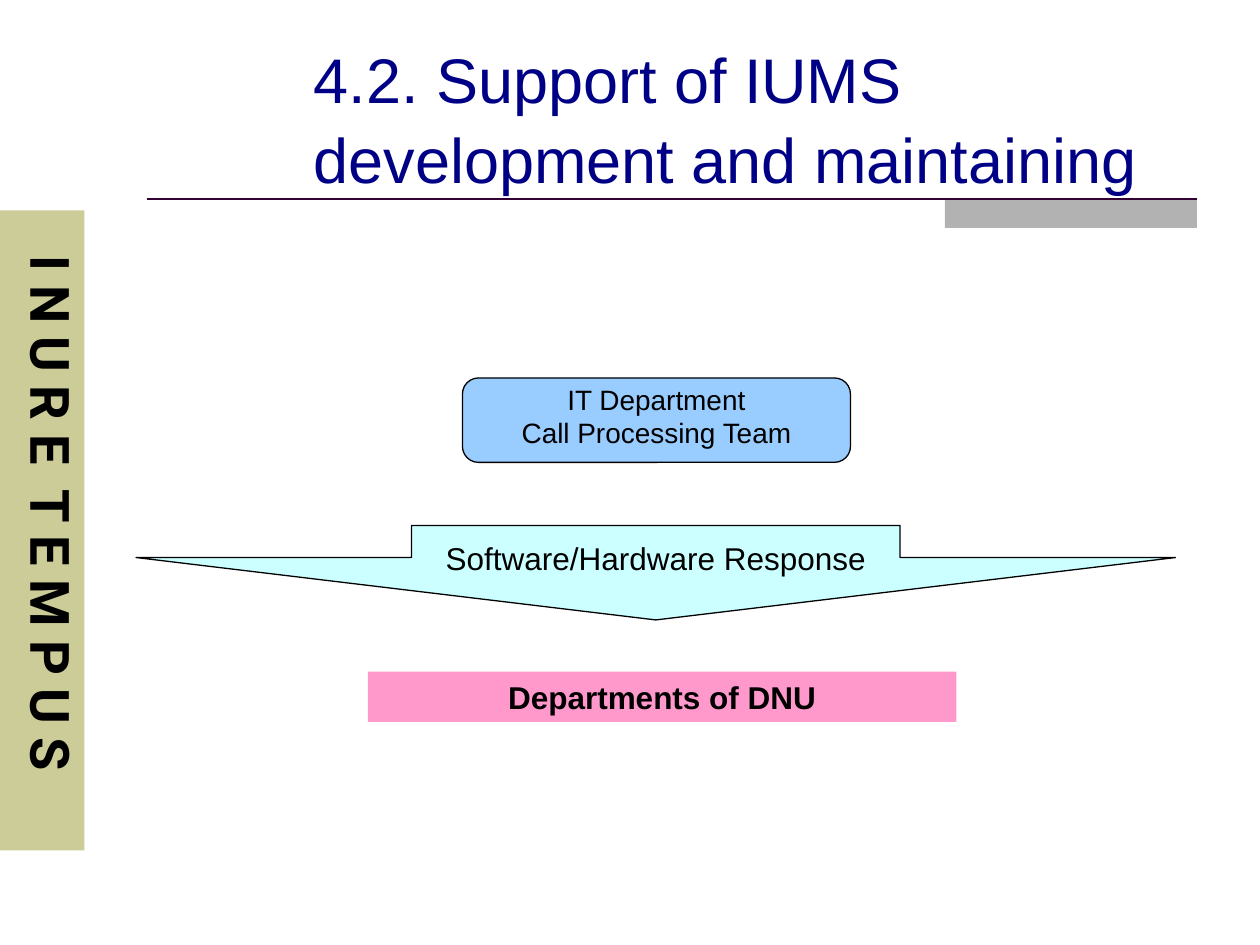
from pptx import Presentation
from pptx import util as u
from pptx.dml.color import RGBColor
from pptx.enum import shapes, text
from pptx.oxml.ns import qn
from lxml import etree

Inches, Pt = u.Inches, u.Pt
ANCHOR, ALIGN, AUTO = text.MSO_ANCHOR, text.PP_ALIGN, text.MSO_AUTO_SIZE
PRESET = shapes.MSO_SHAPE

THEME = {
    "ink": "000000", "title": "000086", "rule": "330033",
    "band": "CCCC99", "tab": "B2B2B2",
    "team": "99CCFF", "response": "CCFFFF", "departments": "FF99CC",
    "font": "Arial", "motto_font": "Roboto",
    "title_size": 36, "motto_size": 31, "label_size": 18, "team_size": 16,
}


def add_block(preset, box, fill, outlined=False):
    block = slide.shapes.add_shape(preset, *map(Inches, box))
    block.shadow.inherit = False
    block.fill.solid()
    block.fill.fore_color.rgb = RGBColor.from_string(THEME[fill])
    if outlined:
        block.line.color.rgb = RGBColor.from_string(THEME["ink"])
        block.line.width = Pt(0.75)
    else:
        block.line.fill.background()
    return block


def write(frame, lines, size, color="ink", font="font", bold=False,
          frame_format=None, paragraph_format=None, gap=0):
    """Fill a text frame; gap is the space in points between paragraphs."""
    for name, value in (frame_format or {}).items():
        setattr(frame, name, value)
    for index, line in enumerate(lines):
        paragraph = frame.paragraphs[0] if index == 0 else frame.add_paragraph()
        paragraph.text = line
        for name, value in (paragraph_format or {}).items():
            setattr(paragraph, name, value)
        paragraph.space_before = Pt(gap if index else 0)
        font_format = {"name": THEME[font], "size": Pt(THEME[size]), "bold": bold}
        for name, value in font_format.items():
            setattr(paragraph.font, name, value)
        paragraph.font.color.rgb = RGBColor.from_string(THEME[color])


prs = Presentation()
prs.slide_width, prs.slide_height = Inches(10), Inches(7.5)
slide = prs.slides.add_slide(prs.slide_layouts[5])

# Side band, title rule and its tab
add_block(PRESET.RECTANGLE, (0, 1.67, 0.67, 5.08), "band")
add_block(PRESET.RECTANGLE, (7.5, 1.58, 2, 0.23), "tab")
rule = slide.shapes.add_connector(
    shapes.MSO_CONNECTOR.STRAIGHT, *map(Inches, (1.17, 1.58, 9.5, 1.58)))
rule.line.color.rgb = RGBColor.from_string(THEME["rule"])
rule.line.width = Pt(1.5)
etree.SubElement(rule._element.spPr, qn("a:effectLst"))

motto = slide.shapes.add_textbox(*map(Inches, (0, 1.83, 0.72, 4.75))).text_frame
write(motto, ["I N U R E  T E M P U S"], "motto_size", font="motto_font", bold=True,
      frame_format={"word_wrap": True, "margin_top": Inches(0.2)})
motto._txBody.bodyPr.set("vert", "eaVert")

title = slide.shapes.title
for name, value in zip(("left", "top", "width", "height"), (2.39, 0.3, 7.1, 1.25)):
    setattr(title, name, Inches(value))
write(title.text_frame, ["4.2. Support of IUMS development and maintaining"],
      "title_size", color="title",
      frame_format={"vertical_anchor": ANCHOR.MIDDLE, "auto_size": AUTO.NONE,
                    "word_wrap": True},
      paragraph_format={"alignment": ALIGN.LEFT, "line_spacing": 1.05})

# Flow from the team to the departments
team = add_block(PRESET.ROUNDED_RECTANGLE, (3.67, 3, 3.08, 0.67), "team", outlined=True)
team.adjustments[0] = 0.19
write(team.text_frame, ["IT Department", "Call Processing Team"], "team_size",
      frame_format={"vertical_anchor": ANCHOR.TOP},
      paragraph_format={"alignment": ALIGN.CENTER, "line_spacing": 0.8}, gap=3.6)

response = add_block(PRESET.DOWN_ARROW, (1.08, 4.17, 8.25, 0.75), "response", outlined=True)
response.adjustments[0], response.adjustments[1] = 0.47, 0.66
write(response.text_frame, ["Software/Hardware Response"], "label_size",
      frame_format={"vertical_anchor": ANCHOR.MIDDLE, "word_wrap": False},
      paragraph_format={"alignment": ALIGN.CENTER})

departments = add_block(PRESET.RECTANGLE, (2.92, 5.33, 4.67, 0.4), "departments")
write(departments.text_frame, ["Departments of DNU"], "label_size", bold=True,
      frame_format={"vertical_anchor": ANCHOR.TOP, "auto_size": AUTO.SHAPE_TO_FIT_TEXT},
      paragraph_format={"alignment": ALIGN.CENTER})

prs.save("out.pptx")
